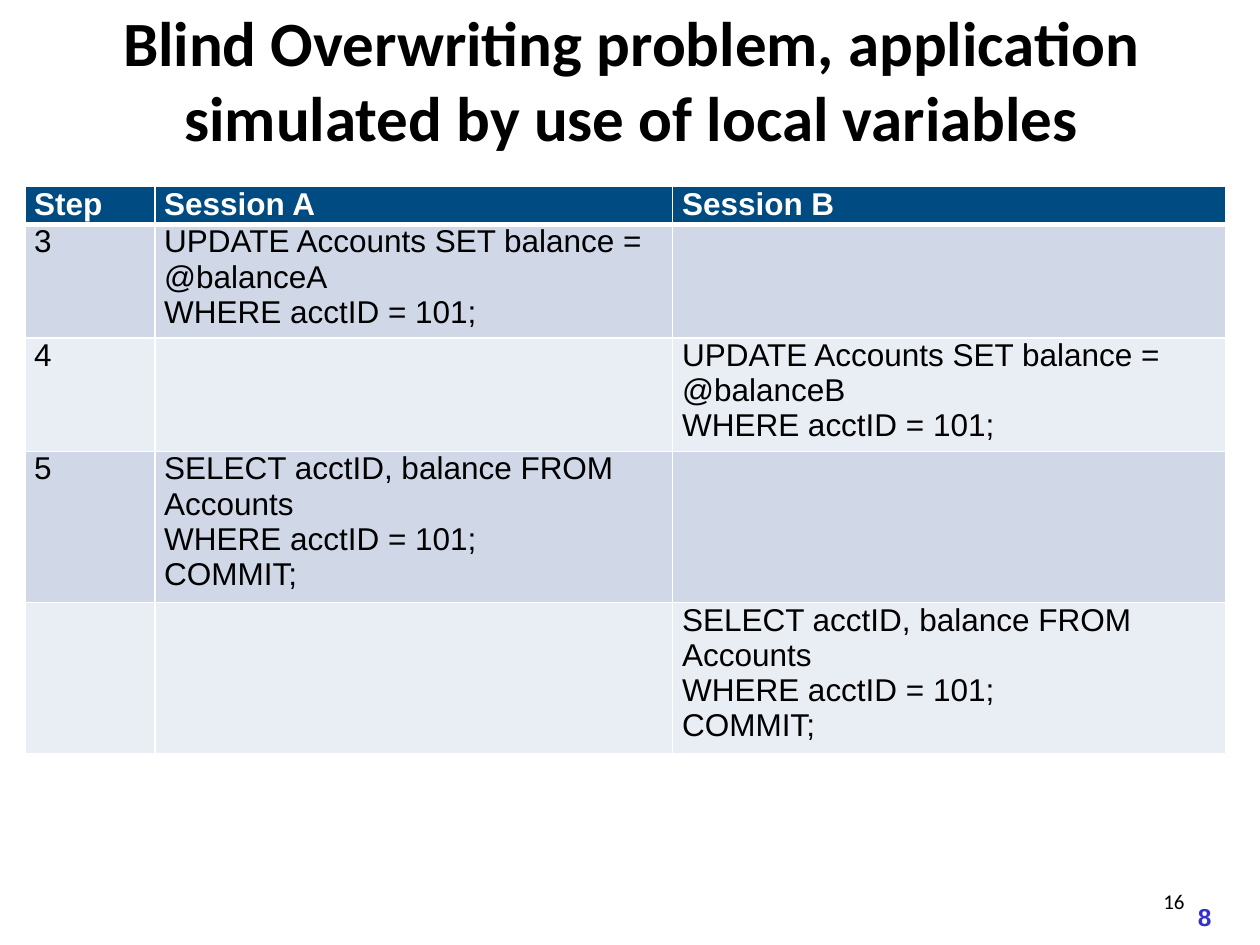
from lxml import etree
from pptx import Presentation
from pptx import util as u
from pptx.dml.color import RGBColor
from pptx.enum import text
from pptx.oxml.ns import qn

COLUMN_WIDTHS = (2.62, 10.44, 11.14)
LINE_HEIGHT = 0.71
FILTER = "WHERE acctID = 101;"
SELECT = ("SELECT acctID, balance FROM Accounts", FILTER, "COMMIT;")
UPDATE_A = ("UPDATE Accounts SET balance = @balanceA", FILTER)
UPDATE_B = ("UPDATE Accounts SET balance = @balanceB", FILTER)
ROWS = (
    (1, ("Step",), ("Session A",), ("Session B",)),
    (3, ("3",), UPDATE_A, ()),
    (3, ("4",), (), UPDATE_B),
    (4, ("5",), SELECT, ()),
    (4, (), (), SELECT),
)


def color(value):
    """Turn a hex string into a colour."""
    return RGBColor.from_string(value)


def write(frame, lines, font="Arial", size=18, fill="000000", bold=False, align=None):
    """Write one paragraph per line with a common format."""
    for index, line in enumerate(lines):
        paragraph = frame.add_paragraph() if index else frame.paragraphs[0]
        paragraph.alignment = align
        run = paragraph.add_run()
        run.text = line
        run.font.name = font
        run.font.size = u.Pt(size)
        run.font.bold = bold
        run.font.color.rgb = color(fill)


def add_title(slide, title):
    """Place and format the title placeholder."""
    shape = slide.shapes.title
    shape.left, shape.top = u.Cm(1.3), u.Cm(0.33)
    shape.width, shape.height = u.Cm(22.86), u.Cm(2.51)
    frame = shape.text_frame
    frame.auto_size = text.MSO_AUTO_SIZE.NONE
    frame.vertical_anchor = text.MSO_ANCHOR.MIDDLE
    write(frame, [title], font="Calibri", size=36, bold=True, align=text.PP_ALIGN.CENTER)


def add_label(slide, label, left, top, width, height, anchor, wrap=True, **style):
    """Add a text box holding a page number."""
    box = slide.shapes.add_textbox(u.Cm(left), u.Cm(top), u.Cm(width), u.Cm(height))
    box.text_frame.word_wrap = wrap
    box.text_frame.vertical_anchor = anchor
    write(box.text_frame, [label], **style)


def set_borders(cell, bottom):
    """Draw white borders with the given bottom width in points."""
    properties = cell._tc.get_or_add_tcPr()
    sides = (("a:lnL", 1), ("a:lnR", 1), ("a:lnT", 1), ("a:lnB", bottom))
    for position, (side, width) in enumerate(sides):
        line = etree.Element(qn(side), w=str(u.Pt(width)))
        fill = etree.SubElement(line, qn("a:solidFill"))
        etree.SubElement(fill, qn("a:srgbClr"), val="FFFFFF")
        properties.insert(position, line)


def format_cell(cell, lines, row):
    """Fill one table cell according to its row."""
    header = row == 0
    cell.margin_left = cell.margin_right = u.Cm(0.19)
    cell.margin_top = cell.margin_bottom = 0
    cell.fill.solid()
    cell.fill.fore_color.rgb = color("004B82" if header else ("E9EDF4", "D0D8E8")[row % 2])
    set_borders(cell, 3 if header else 1)
    write(cell.text_frame, lines, bold=header, fill="FFFFFF" if header else "000000")
    if lines and not header:
        cell.text_frame.paragraphs[-1].alignment = text.PP_ALIGN.JUSTIFY


def add_sessions(slide):
    """Add the table of steps in both sessions."""
    height = LINE_HEIGHT * sum(row[0] for row in ROWS)
    table = slide.shapes.add_table(
        len(ROWS), len(COLUMN_WIDTHS),
        u.Cm(0.5), u.Cm(3.76), u.Cm(sum(COLUMN_WIDTHS)), u.Cm(height),
    ).table
    for column, width in zip(table.columns, COLUMN_WIDTHS):
        column.width = u.Cm(width)
    for row, (line_count, *cells) in enumerate(ROWS):
        table.rows[row].height = u.Cm(LINE_HEIGHT * line_count)
        for column, lines in enumerate(cells):
            format_cell(table.cell(row, column), lines, row)


def main():
    """Build the slide and save it."""
    presentation = Presentation()
    presentation.slide_width, presentation.slide_height = u.Cm(25.4), u.Cm(19.05)
    slide = presentation.slides.add_slide(presentation.slide_layouts[5])
    add_label(slide, "8", 23.9, 18.06, 0.79, 0.86, text.MSO_ANCHOR.TOP, wrap=False,
              size=14, fill="3333CC", bold=True)
    add_title(slide, "Blind Overwriting problem, application simulated by use of local variables")
    add_sessions(slide)
    add_label(slide, "16", 18.21, 17.65, 5.92, 1.02, text.MSO_ANCHOR.MIDDLE,
              font="Calibri", size=12, align=text.PP_ALIGN.RIGHT)
    presentation.save("out.pptx")


if __name__ == "__main__":
    main()
